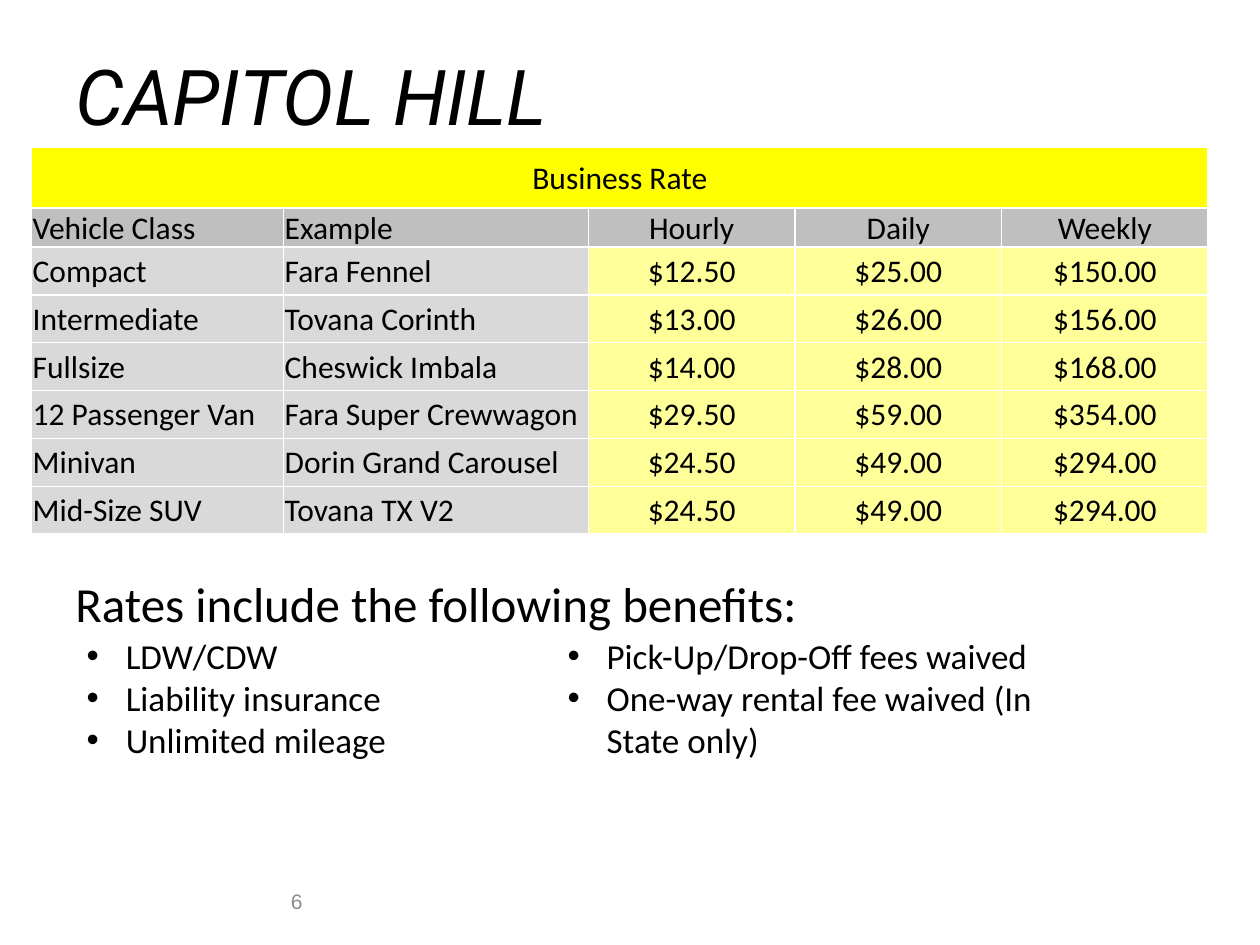
import pptx
import pptx.util
import pptx.dml.color
import pptx.enum.text
import pptx.oxml
import pptx.oxml.ns

Inches = pptx.util.Inches
Pt = pptx.util.Pt
RGBColor = pptx.dml.color.RGBColor
ALIGN = pptx.enum.text.PP_ALIGN
ANCHOR = pptx.enum.text.MSO_ANCHOR

BLACK = RGBColor(0, 0, 0)
GRAY = RGBColor(0x8C, 0x8C, 0x8C)
YELLOW = RGBColor(0xFF, 0xFF, 0)
PALE = RGBColor(0xFF, 0xFF, 0x99)
SILVER = RGBColor(0xBF, 0xBF, 0xBF)
LIGHT = RGBColor(0xD9, 0xD9, 0xD9)

TITLE = "CAPITOL HILL"
BANNER = "Business Rate"
HEADS = ["Vehicle Class", "Example", "Hourly", "Daily", "Weekly"]
RATES = [
    ["Compact", "Fara Fennel", "$12.50", "$25.00", "$150.00"],
    ["Intermediate", "Tovana Corinth", "$13.00", "$26.00", "$156.00"],
    ["Fullsize", "Cheswick Imbala", "$14.00", "$28.00", "$168.00"],
    ["12 Passenger Van", "Fara Super Crewwagon", "$29.50", "$59.00", "$354.00"],
    ["Minivan", "Dorin Grand Carousel", "$24.50", "$49.00", "$294.00"],
    ["Mid-Size SUV", "Tovana TX V2", "$24.50", "$49.00", "$294.00"],
]
LEAD = "Rates include the following benefits:"
PERKS = [
    "LDW/CDW",
    "Liability insurance",
    "Unlimited mileage",
    "Pick-Up/Drop-Off fees waived",
    "One-way rental fee waived (In State only)",
]
PAGE = "6"
WIDTHS = [2, 2.42, 1.64, 1.64, 1.64]
HEIGHTS = [0.48, 0.26] + [0.38] * len(RATES)


def style(para, size, face="Calibri", color=BLACK, align=ALIGN.LEFT):
    para.alignment = align
    for run in para.runs:
        run.font.size = Pt(size)
        run.font.name = face
        run.font.color.rgb = color


def add_box(slide, place, lines, wrap=True):
    box = slide.shapes.add_textbox(*map(Inches, place))
    frame = box.text_frame
    frame.word_wrap = wrap
    frame.text = "\n".join(lines)
    return frame


def add_edges(cell):
    props = cell._tc.get_or_add_tcPr()
    for side in ("lnL", "lnR", "lnT", "lnB"):
        props.append(pptx.oxml.parse_xml(
            f'<a:{side} {pptx.oxml.ns.nsdecls("a")} w="12700"><a:solidFill>'
            f'<a:srgbClr val="FFFFFF"/></a:solidFill></a:{side}>'))


def add_bullet(para):
    props = para._p.get_or_add_pPr()
    props.set("marL", str(Inches(0.31)))
    props.set("indent", str(-Inches(0.31)))
    for mark in ('buFont {} typeface="Arial"', 'buChar {} char="•"'):
        body = mark.format(pptx.oxml.ns.nsdecls("a"))
        props.append(pptx.oxml.parse_xml(f"<a:{body}/>"))


def fill_table(slide):
    rows = [[BANNER] + [""] * 4, HEADS] + RATES
    place = (0.25, 1.17, sum(WIDTHS), sum(HEIGHTS))
    table = slide.shapes.add_table(
        len(rows), len(HEADS), *map(Inches, place)).table
    table.first_row = False
    table.horz_banding = False
    for col, width in zip(table.columns, WIDTHS):
        col.width = Inches(width)
    for row, height in zip(table.rows, HEIGHTS):
        row.height = Inches(height)
    table.cell(0, 0).merge(table.cell(0, len(HEADS) - 1))
    for i, row in enumerate(rows):
        for j, text in enumerate(row):
            cell = table.cell(i, j)
            add_edges(cell)
            cell.margin_left = cell.margin_right = cell.margin_top = Inches(0.01)
            cell.margin_bottom = 0
            cell.vertical_anchor = ANCHOR.BOTTOM if i == 1 else ANCHOR.MIDDLE
            cell.fill.solid()
            body = LIGHT if j < 2 else PALE
            cell.fill.fore_color.rgb = (YELLOW, SILVER)[i] if i < 2 else body
            if cell.is_spanned:
                continue
            cell.text_frame.text = text
            align = ALIGN.CENTER if i == 0 or j > 1 else ALIGN.LEFT
            style(cell.text_frame.paragraphs[0], 18, align=align)


def main():
    deck = pptx.Presentation()
    deck.slide_width, deck.slide_height = Inches(10), Inches(7.5)
    slide = deck.slides.add_slide(deck.slide_layouts[5])

    title = slide.shapes.title
    title.left, title.top, title.width, title.height = map(
        Inches, (0.5, 0.3, 9, 0.91))
    title.text_frame.text = TITLE
    title.text_frame.vertical_anchor = ANCHOR.MIDDLE
    para = title.text_frame.paragraphs[0]
    style(para, 44, "Roboto")
    para.runs[0].font.italic = True

    page = add_box(slide, (2.08, 6.95, 0.42, 0.4), [PAGE])
    page.vertical_anchor = ANCHOR.MIDDLE
    style(page.paragraphs[0], 12, "Arial", GRAY, ALIGN.RIGHT)

    perks = add_box(slide, (0.59, 4.99, 7.83, 1.26), PERKS)
    perks._txBody.bodyPr.set("numCol", "2")
    for para in perks.paragraphs:
        add_bullet(para)
        style(para, 20)

    lead = add_box(slide, (0.5, 4.5, 5.99, 0.57), [LEAD], wrap=False)
    style(lead.paragraphs[0], 28)

    fill_table(slide)
    deck.save("out.pptx")


if __name__ == "__main__":
    main()
